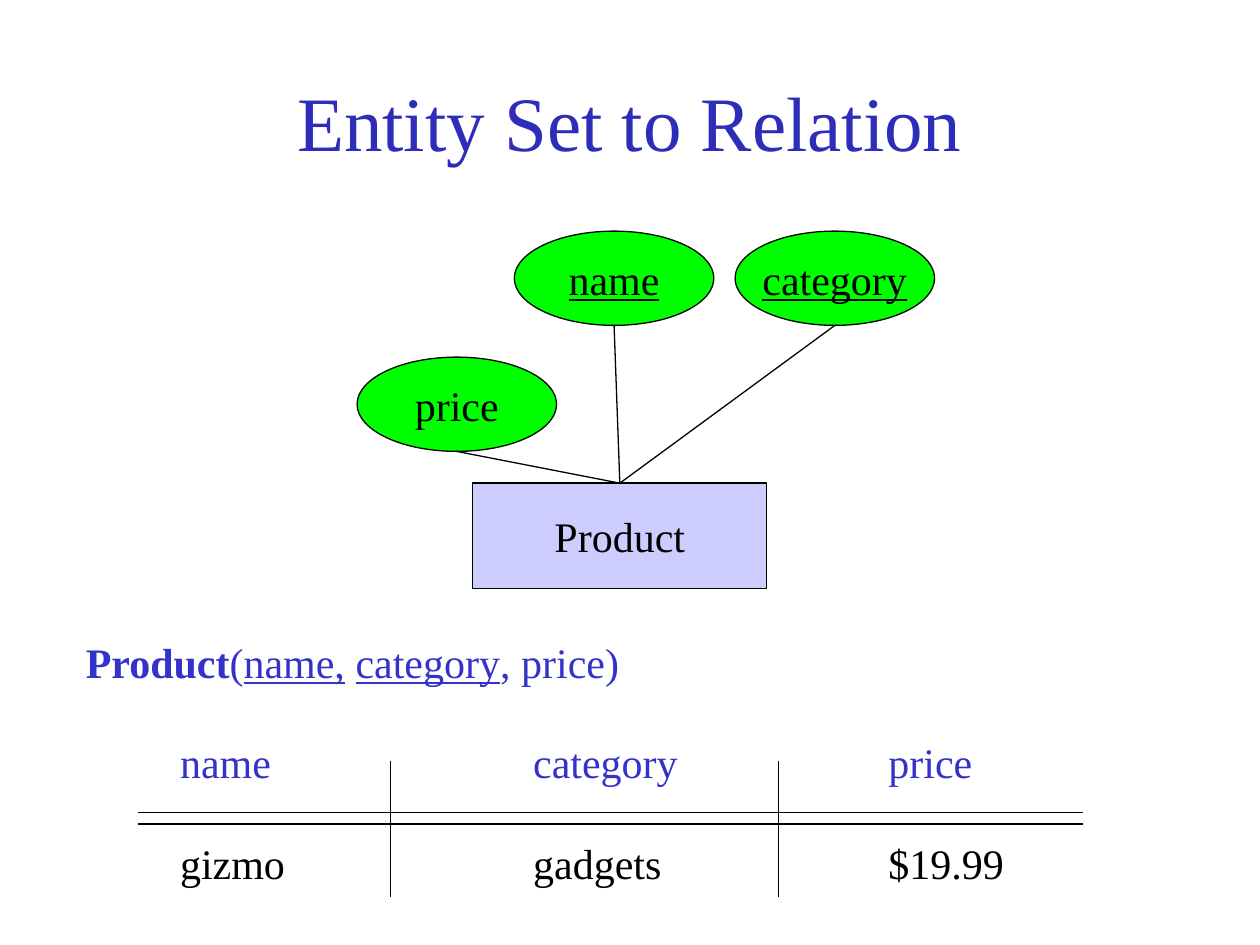
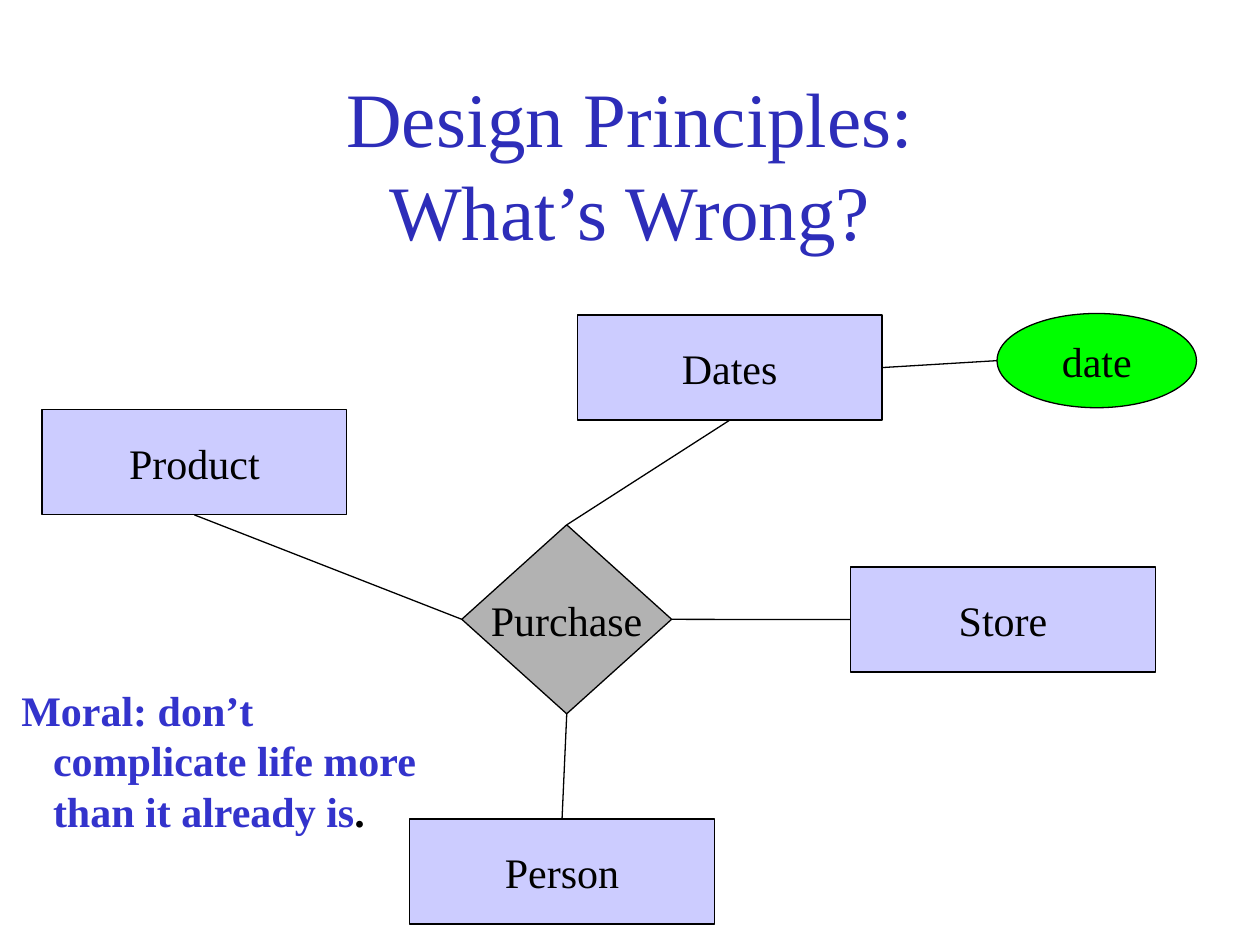
from dataclasses import dataclass
from enum import IntEnum

from lxml.etree import SubElement
from pptx import Presentation
from pptx.dml.color import RGBColor
from pptx.enum.shapes import MSO_CONNECTOR as Connector, MSO_SHAPE as Preset
from pptx.enum.text import MSO_ANCHOR as Anchor, PP_ALIGN as Align
from pptx.oxml.ns import qn
from pptx.shapes.autoshape import Shape
from pptx.shapes.connector import Connector as Line
from pptx.slide import Slide
from pptx.text.text import TextFrame
from pptx.util import Cm, Pt

FONT = "Times New Roman"
BLACK, BLUE, TITLE_BLUE = "000000", "3333CC", "2D2DB9"
LAVENDER, GREEN, GREY = "CCCCFF", "00FF00", "B2B2B2"
BODY_SIZE, TITLE_SIZE = 24, 44
LINE_WIDTH = 0.75
ROW_GAP = 28.8
COLUMN_STOPS = (1.9, 9.02, 16.18)
RULE_LEFT, RULE_RIGHT, RULE_ROWS = 2.79, 21.84, (16.38, 16.61)
DIVIDER_TOP, DIVIDER_BOTTOM, DIVIDER_COLUMNS = 15.34, 18.08, (7.87, 15.7)


class Side(IntEnum):
    TOP = 0
    LEFT = 1
    BOTTOM = 2
    RIGHT = 3


@dataclass(frozen=True)
class Style:
    preset: Preset
    fill: str
    width: float
    height: float


@dataclass(frozen=True)
class Node:
    label: str
    style: Style
    left: float
    top: float
    is_key: bool = False


@dataclass(frozen=True)
class Link:
    start: str
    start_side: Side
    end: str
    end_side: Side


@dataclass(frozen=True)
class Words:
    text: str
    color: str = BLUE
    bold: bool = False
    underline: bool = False


ENTITY = Style(Preset.RECTANGLE, LAVENDER, 6.14, 2.12)
NARROW_ENTITY = Style(Preset.RECTANGLE, LAVENDER, 5.93, 2.12)
ATTRIBUTE = Style(Preset.OVAL, GREEN, 4.02, 1.9)
RELATIONSHIP = Style(Preset.DIAMOND, GREY, 4.23, 3.81)

PRODUCT_NODES = (
    Node("Product", NARROW_ENTITY, 9.53, 9.74),
    Node("name", ATTRIBUTE, 10.37, 4.66, is_key=True),
    Node("category", ATTRIBUTE, 14.82, 4.66, is_key=True),
    Node("price", ATTRIBUTE, 7.2, 7.2),
)
PRODUCT_LINKS = tuple(
    Link(name, Side.BOTTOM, "Product", Side.TOP) for name in ("category", "name", "price")
)
PURCHASE_NODES = (
    Node("Purchase", RELATIONSHIP, 9.31, 10.58),
    Node("Product", ENTITY, 0.85, 8.26),
    Node("Person", ENTITY, 8.26, 16.51),
    Node("Store", ENTITY, 17.15, 11.43),
    Node("date", ATTRIBUTE, 20.1, 6.32),
    Node("Dates", ENTITY, 11.64, 6.35),
)
PURCHASE_LINKS = (
    Link("Purchase", Side.TOP, "Dates", Side.BOTTOM),
    Link("Purchase", Side.LEFT, "Product", Side.BOTTOM),
    Link("Purchase", Side.BOTTOM, "Person", Side.TOP),
    Link("Purchase", Side.RIGHT, "Store", Side.LEFT),
    Link("date", Side.LEFT, "Dates", Side.RIGHT),
)
SCHEMA = (
    Words("Product", bold=True),
    Words("("),
    Words("name,", underline=True),
    Words(" "),
    Words("category", underline=True),
    Words(", price)"),
)
TABLE_ROWS = (
    (("name", "category", "price"), BLUE),
    (("gizmo", "gadgets", "$19.99"), BLACK),
)
MORAL = (
    (Words("Moral: don’t", bold=True),),
    (Words("complicate life more", bold=True),),
    (Words("than it already is", bold=True), Words(".", BLACK, bold=True)),
)


def rgb(color: str) -> RGBColor:
    return RGBColor.from_string(color)


def style_font(font, size: float, color: str) -> None:
    font.name = FONT
    font.size = Pt(size)
    font.color.rgb = rgb(color)


def add_words(para, words: tuple[Words, ...]) -> None:
    for part in words:
        span = para.add_run()
        span.text = part.text
        style_font(span.font, BODY_SIZE, part.color)
        span.font.bold = part.bold
        span.font.underline = part.underline


def add_box(page: Slide, left: float, top: float, width: float, height: float) -> TextFrame:
    frame = page.shapes.add_textbox(Cm(left), Cm(top), Cm(width), Cm(height)).text_frame
    frame.word_wrap = True
    return frame


def add_title(page: Slide, text: str, top: float) -> None:
    frame = add_box(page, 1.9, top, 21.6, 3.18)
    frame.vertical_anchor = Anchor.MIDDLE
    para = frame.paragraphs[0]
    para.text = text
    para.alignment = Align.CENTER
    for span in para.runs:
        style_font(span.font, TITLE_SIZE, TITLE_BLUE)


def add_node(page: Slide, node: Node) -> Shape:
    style = node.style
    shape = page.shapes.add_shape(
        style.preset, Cm(node.left), Cm(node.top), Cm(style.width), Cm(style.height)
    )
    shape.shadow.inherit = False
    shape.fill.solid()
    shape.fill.fore_color.rgb = rgb(style.fill)
    shape.line.color.rgb = rgb(BLACK)
    shape.line.width = Pt(LINE_WIDTH)
    frame = shape.text_frame
    frame.word_wrap = False
    frame.vertical_anchor = Anchor.MIDDLE
    frame.text = node.label
    para = frame.paragraphs[0]
    para.alignment = Align.CENTER
    style_font(para.runs[0].font, BODY_SIZE, BLACK)
    para.runs[0].font.underline = node.is_key
    return shape


def add_line(page: Slide, start: tuple[int, int], end: tuple[int, int]) -> Line:
    line = page.shapes.add_connector(Connector.STRAIGHT, *start, *end)
    line.line.color.rgb = rgb(BLACK)
    line.line.width = Pt(LINE_WIDTH)
    SubElement(line.element.spPr, qn("a:effectLst"))
    return line


def side_point(shape: Shape, side: Side) -> tuple[int, int]:
    across, down = {
        Side.TOP: (0.5, 0), Side.LEFT: (0, 0.5), Side.BOTTOM: (0.5, 1), Side.RIGHT: (1, 0.5)
    }[side]
    return int(shape.left + across * shape.width), int(shape.top + down * shape.height)


def add_diagram(page: Slide, nodes: tuple[Node, ...], links: tuple[Link, ...]) -> None:
    shapes = {node.label: add_node(page, node) for node in nodes}
    for link in links:
        start, end = shapes[link.start], shapes[link.end]
        line = add_line(page, side_point(start, link.start_side), side_point(end, link.end_side))
        if start.auto_shape_type != Preset.OVAL:
            line.begin_connect(start, link.start_side)
        line.end_connect(end, link.end_side)


def add_column_stops(para) -> None:
    stops = SubElement(para._p.get_or_add_pPr(), qn("a:tabLst"))
    for position in COLUMN_STOPS:
        SubElement(stops, qn("a:tab"), pos=str(Cm(position)), algn="l")


def add_relation(page: Slide) -> None:
    frame = add_box(page, 1.48, 12.7, 19.15, 5.39)
    add_words(frame.paragraphs[0], SCHEMA)
    for cells, color in TABLE_ROWS:
        para = frame.add_paragraph()
        add_column_stops(para)
        para.space_before = Pt(ROW_GAP)
        add_words(para, tuple(Words("\t" + cell, color) for cell in cells))
    for row in RULE_ROWS:
        add_line(page, (Cm(RULE_LEFT), Cm(row)), (Cm(RULE_RIGHT), Cm(row)))
    for column in DIVIDER_COLUMNS:
        add_line(page, (Cm(column), Cm(DIVIDER_TOP)), (Cm(column), Cm(DIVIDER_BOTTOM)))


def add_moral(page: Slide) -> None:
    frame = add_box(page, 0.18, 13.67, 8.6, 3.3)
    for index, words in enumerate(MORAL):
        para = frame.add_paragraph() if index else frame.paragraphs[0]
        if index:
            para._p.get_or_add_pPr().set("marL", str(Cm(0.64)))
        add_words(para, words)


def main() -> None:
    deck = Presentation()
    deck.slide_width, deck.slide_height = Cm(25.4), Cm(19.05)
    blank = deck.slide_layouts[6]

    page = deck.slides.add_slide(blank)
    add_title(page, "Entity Set to Relation", 0.85)
    add_relation(page)
    add_diagram(page, PRODUCT_NODES, PRODUCT_LINKS)

    page = deck.slides.add_slide(blank)
    add_title(page, "Design Principles:\vWhat’s Wrong?", 1.7)
    add_moral(page)
    add_diagram(page, PURCHASE_NODES, PURCHASE_LINKS)

    deck.save("out.pptx")


if __name__ == "__main__":
    main()
